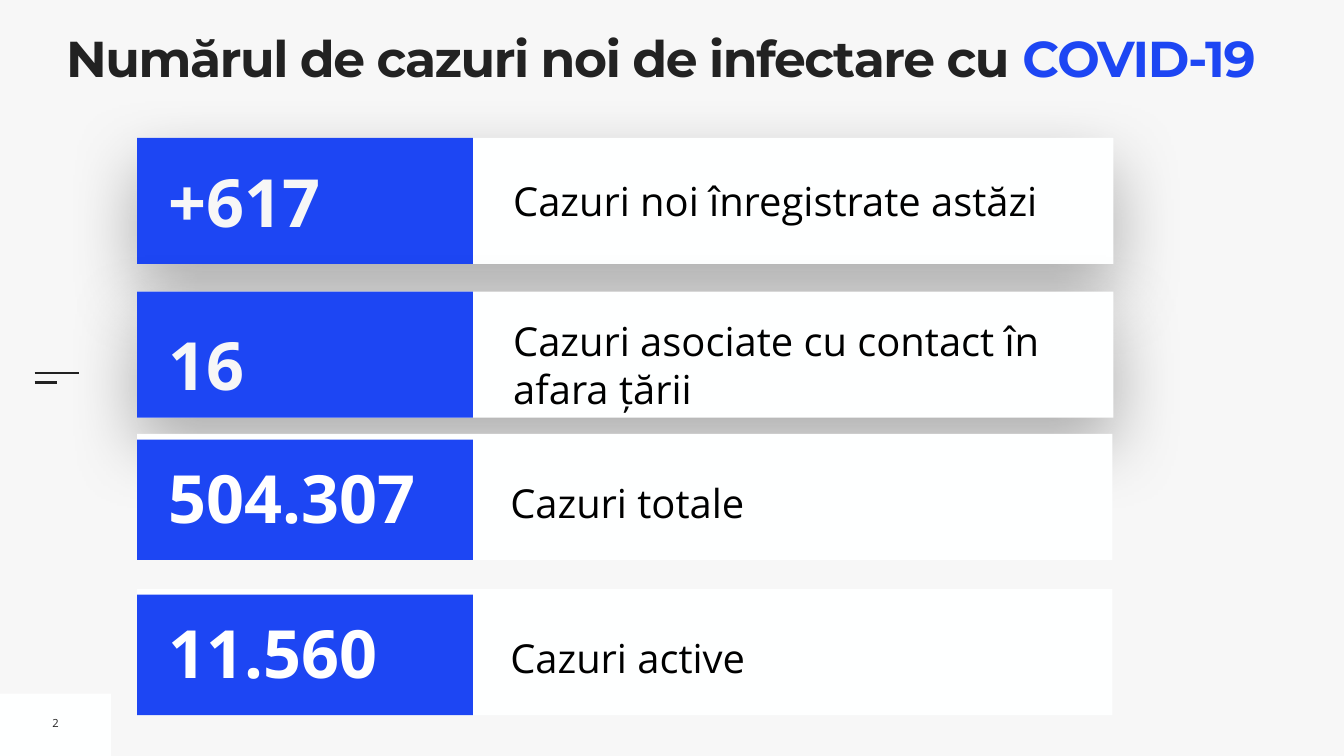
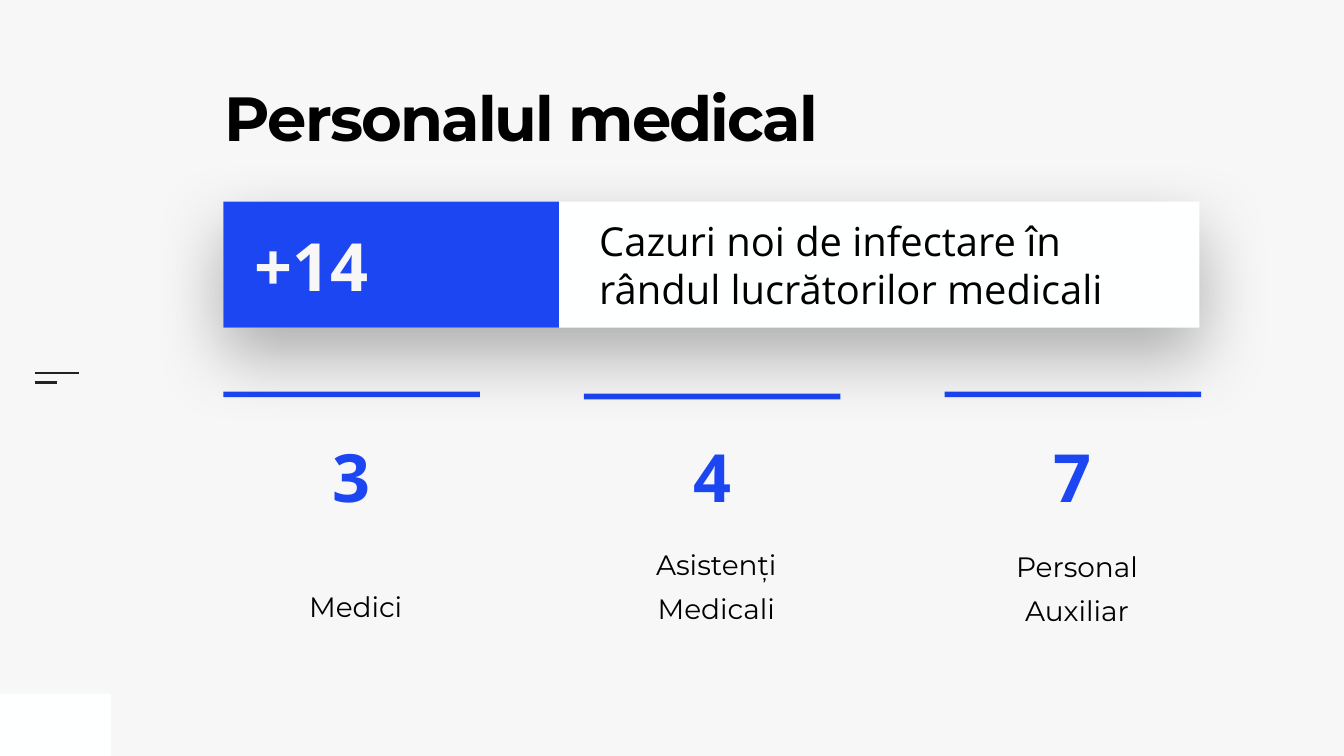
from lxml import etree
from pptx import Presentation
from pptx import util as u
from pptx.dml import color
from pptx.enum import shapes, text
from pptx.oxml import ns

COLORS = {
    "page": "F7F7F7",
    "panel": "FEFFFF",
    "accent": "1D46F3",
    "ink": "222222",
    "black": "000000",
    "white": "FFFFFF",
}
HEADING, BODY = "Montserrat", "Open Sans"
PAGE_W, PAGE_H = 1920, 1080
MIDDLE, LEFT, CENTER = text.MSO_ANCHOR.MIDDLE, text.PP_ALIGN.LEFT, text.PP_ALIGN.CENTER
BADGE_W = 479.5


def rgb(key):
    return color.RGBColor.from_string(COLORS[key])


def lengths(*values):
    return [u.Pt(value) for value in values]


def add_child(parent, tag, **attributes):
    return etree.SubElement(parent, ns.qn(tag), attributes)


def add_bar(slide, box, fill):
    bar = slide.shapes.add_shape(shapes.MSO_SHAPE.RECTANGLE, *lengths(*box))
    bar.shadow.inherit = False
    bar.fill.solid()
    bar.fill.fore_color.rgb = rgb(fill)
    bar.line.fill.background()
    return bar


def cast_shadow(panel):
    effects = panel._element.spPr.find(ns.qn("a:effectLst"))
    shadow = add_child(effects, "a:outerShdw", blurRad=str(u.Pt(100)), dist=str(u.Pt(40)),
                       dir="5400000", rotWithShape="0")
    tint = add_child(shadow, "a:srgbClr", val=COLORS["black"])
    add_child(tint, "a:alpha", val="30000")


def write(holder, runs, size, font, bold=False, align=LEFT, anchor=MIDDLE,
          insets=(7.2,) * 4, spacing=None, tracking=None, wrap=True):
    frame = holder.text_frame
    frame.word_wrap = wrap
    frame.vertical_anchor = anchor
    (frame.margin_left, frame.margin_top,
     frame.margin_right, frame.margin_bottom) = lengths(*insets)
    paragraph = frame.paragraphs[0]
    paragraph.alignment = align
    if spacing:
        paragraph.line_spacing = spacing
    for words, ink in runs:
        run = paragraph.add_run()
        run.text = words
        run.font.name = font
        run.font.size = u.Pt(size)
        run.font.bold = bold
        run.font.color.rgb = rgb(ink)
        if tracking:
            run._r.get_or_add_rPr().set("spc", str(round(tracking * 100)))


def add_text(slide, box, runs, size, font, **style):
    write(slide.shapes.add_textbox(*lengths(*box)), runs, size, font, **style)


def add_title(slide, box, runs, size, tracking):
    add_text(slide, box, runs, size, HEADING, bold=True, anchor=text.MSO_ANCHOR.TOP,
             insets=(0,) * 4, spacing=0.8, tracking=tracking)


def add_figure(slide, box, figure, ink, align=LEFT):
    add_text(slide, box, [(figure, ink)], 95, BODY, bold=True, align=align)


def new_slide(deck):
    slide = deck.slides.add_slide(deck.slide_layouts[6])
    slide.background.fill.solid()
    slide.background.fill.fore_color.rgb = rgb("page")
    add_bar(slide, (0, 991, 158.5, 89), "panel")
    for y, width in ((533.5, 63.5), (546.5, 31.5)):
        menu_line = slide.shapes.add_connector(
            shapes.MSO_CONNECTOR.STRAIGHT, *lengths(49.5, y, 49.5 + width, y))
        menu_line.line.color.rgb = rgb("ink")
        menu_line.line.width = u.Pt(3)
        add_child(menu_line._element.spPr, "a:effectLst")
    return slide


def add_raised_row(slide, left, top, figure, label, label_h, drop=0):
    cast_shadow(add_bar(slide, (left, top, 1394.5, 180), "panel"))
    middle = top + 90 + drop
    add_text(slide, (left + 530, middle - label_h / 2, 847, label_h),
             [(label, "black")], 57, BODY)
    add_bar(slide, (left, top, BADGE_W, 180), "accent")
    add_figure(slide, (left + 38, middle - 65, 434, 130), figure, "page")


def add_flat_row(slide, left, top, figure, label, label_h):
    add_bar(slide, (left, top, 1393, 180), "panel")
    add_text(slide, (left + 533, top + 87 - label_h / 2, 834, label_h),
             [(label, "black")], 57, BODY, insets=(0,) * 4, spacing=1.3)
    add_bar(slide, (left, top + 8, BADGE_W, 172), "accent")
    add_figure(slide, (left + 38, top + 25.5, 434, 130), figure, "white")


def add_staff_card(slide, left, top, bar_top, count, role):
    card = add_bar(slide, (left, top, 366.5, 393), "page")
    write(card, [(role, "black")], 40, HEADING, align=CENTER,
          anchor=text.MSO_ANCHOR.BOTTOM, insets=(39.6, 51, 28, 62.6), spacing=1.3)
    add_bar(slide, (left, bar_top, 366.5, 8), "accent")


def build_cases(deck):
    slide = new_slide(deck)
    add_text(slide, (67, 1014.5, 24.5, 36.5), [("2", "ink")], 16, BODY,
             align=CENTER, wrap=False)
    add_title(slide, (94.5, 56, 1723.5, 114),
              [("Numărul de cazuri noi de infectare cu ", "ink"), ("COVID-19", "accent")], 72, -2)
    left = 196
    add_flat_row(slide, left, 841.5, "11.560", "Cazuri active", 90)
    add_raised_row(slide, left, 197, "+617", "Cazuri noi înregistrate astăzi", 83.5)
    add_raised_row(slide, left, 416.5, "16", "Cazuri asociate cu contact în afara țării",
                   152.5, drop=14)
    add_flat_row(slide, left, 620, "504.307", "Cazuri totale", 80.5)


def build_staff(deck):
    slide = new_slide(deck)
    left, step, top = 319, 515.25, 559.5
    staff = [("3", "Medici", 0), ("4", "Asistenți Medicali", 3), ("7", "Personal Auxiliar", 0)]
    for i, (count, role, bar_drop) in enumerate(staff):
        add_staff_card(slide, left + i * step, top + 3 * i, top + bar_drop, count, role)
    add_title(slide, (321, 134.5, 936.5, 196.5), [("Personalul medical", "black")], 89, -2.7)
    add_raised_row(slide, left, 288, "+14",
                   "Cazuri noi de infectare în rândul lucrătorilor medicali", 152.5)
    for i, (count, _, _) in enumerate(staff):
        add_figure(slide, (left + i * step, 615, 366.5, 130), count, "accent", CENTER)


def main():
    deck = Presentation()
    deck.slide_width, deck.slide_height = lengths(PAGE_W, PAGE_H)
    build_cases(deck)
    build_staff(deck)
    deck.save("out.pptx")


if __name__ == "__main__":
    main()
